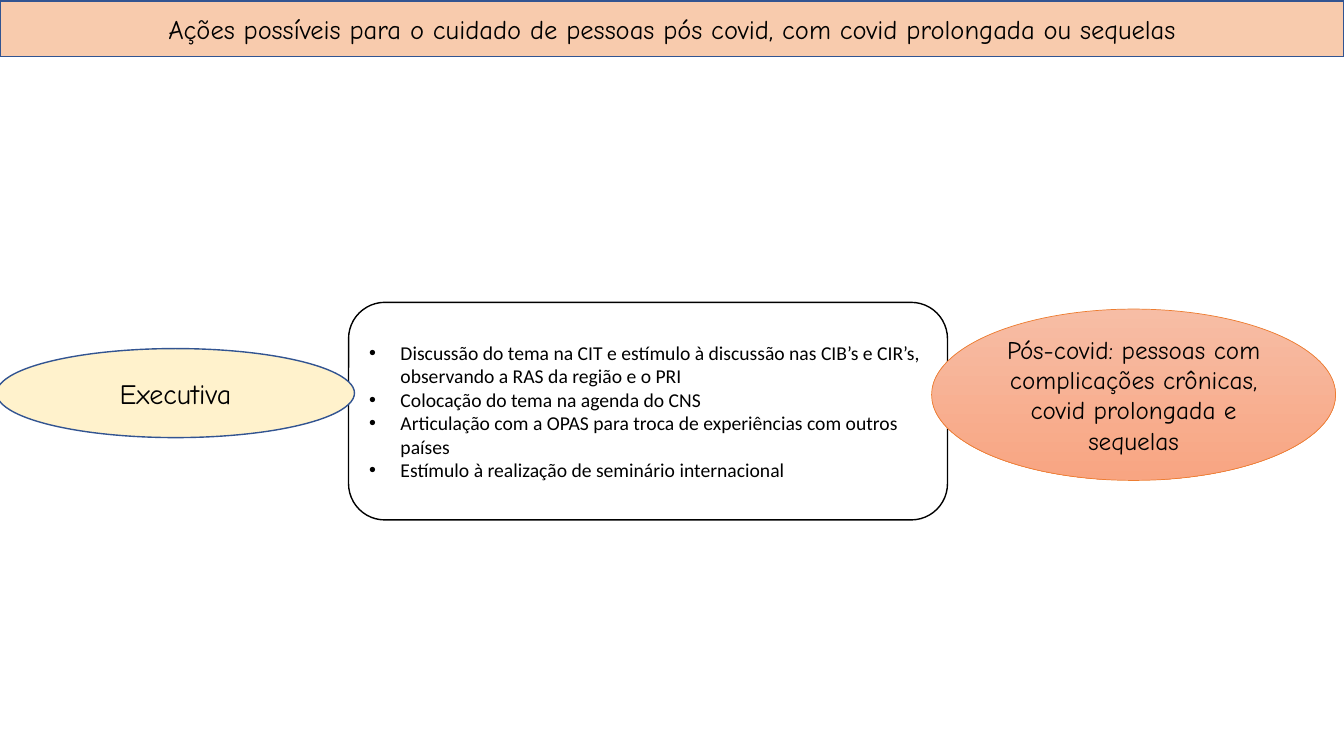
from lxml.etree import SubElement as Sub
from pptx import Presentation as Deck
from pptx.dml.color import RGBColor as Rgb
from pptx.enum.shapes import MSO_SHAPE as Kind
from pptx.enum.text import MSO_ANCHOR as Anchor, MSO_AUTO_SIZE as Fit, PP_ALIGN as Align
from pptx.oxml.ns import qn
from pptx.util import Inches, Pt

COLS, ROWS = 160, 90
INK = {
    "text": "000000",
    "peach": "F8CBAD",
    "cream": "FFF2CC",
    "navy": "325491",
    "orange": "ED7D31",
    "light": "F7BDA5",
    "deep": "F8A582",
}
ITEMS = [
    "Discussão do tema na CIT e estímulo à discussão nas CIB’s e CIR’s, observando a RAS da região e o PRI",
    "Colocação do tema na agenda do CNS",
    "Articulação com a OPAS para troca de experiências com outros países",
    "Estímulo à realização de seminário internacional",
]


class Board:
    head, body = "Comic Neue", "Calibri"

    def __init__(self, deck):
        self.wide, self.high = deck.slide_width, deck.slide_height
        self.slide = deck.slides.add_slide(deck.slide_layouts[1])

    def area(self, col, row, cols, rows):
        x, y = self.wide / COLS, self.high / ROWS
        return [int(n) for n in (col * x, row * y, cols * x, rows * y)]

    def place(self, shape, box, form):
        shape.left, shape.top, shape.width, shape.height = self.area(*box)
        geom = Sub(shape.element.spPr, qn("a:prstGeom"), prst=form)
        Sub(geom, qn("a:avLst"))

    def paint(self, shape, fill, line, width=1):
        if not fill:
            shape.fill.background()
        elif len(fill) == 1:
            shape.fill.solid()
            shape.fill.fore_color.rgb = self.tint(fill[0])
        else:
            shape.fill.gradient()
            shape.fill.gradient_angle = 270
            for stop, name in zip(shape.fill.gradient_stops, fill):
                stop.color.rgb = self.tint(name)
        shape.line.color.rgb = self.tint(line)
        shape.line.width = Pt(width)

    def tint(self, name):
        return Rgb.from_string(INK[name])

    def label(self, shape, lines, font, size, align):
        frame = shape.text_frame
        frame.text = "\n".join(lines)
        frame.word_wrap = True
        frame.auto_size = Fit.NONE
        frame.vertical_anchor = Anchor.MIDDLE
        for par in frame.paragraphs:
            par.alignment = align
            par.space_before = Pt(0)
            par.font.name, par.font.size = font, Pt(size)
            par.font.color.rgb = self.tint("text")

    def title(self, text, box):
        shape = self.slide.shapes.title
        self.place(shape, box, "rect")
        self.paint(shape, ["peach"], "navy")
        self.label(shape, [text], self.head, 19, Align.CENTER)

    def bullets(self, items, box):
        shape = self.slide.placeholders[1]
        self.place(shape, box, "roundRect")
        self.paint(shape, [], "text")
        self.label(shape, items, self.body, 14, Align.LEFT)
        for par in shape.text_frame.paragraphs:
            props = par._p.get_or_add_pPr()
            props.set("marL", str(Inches(0.31)))
            props.set("indent", str(-Inches(0.31)))

    def oval(self, text, box, size, fill, line, width=1):
        shape = self.slide.shapes.add_shape(Kind.OVAL, *self.area(*box))
        shape.shadow.inherit = False
        self.paint(shape, fill, line, width)
        self.label(shape, [text], self.head, size, Align.CENTER)


def main():
    deck = Deck()
    deck.slide_width, deck.slide_height = Inches(13.33), Inches(7.5)
    board = Board(deck)
    board.title(
        "Ações possíveis para o cuidado de pessoas pós covid, com covid prolongada ou sequelas",
        (0, 0.12, 160, 6.6),
    )
    board.bullets(ITEMS, (41.5, 36, 71.3, 25.9))
    board.oval("Executiva", (-0.4, 41.5, 42.6, 10.6), 20, ["cream"], "navy")
    board.oval(
        "Pós-covid: pessoas com complicações crônicas, covid prolongada e sequelas",
        (110.9, 36.8, 48.1, 20.4), 18, ["light", "deep"], "orange", 0.5,
    )
    deck.save("out.pptx")


if __name__ == "__main__":
    main()
